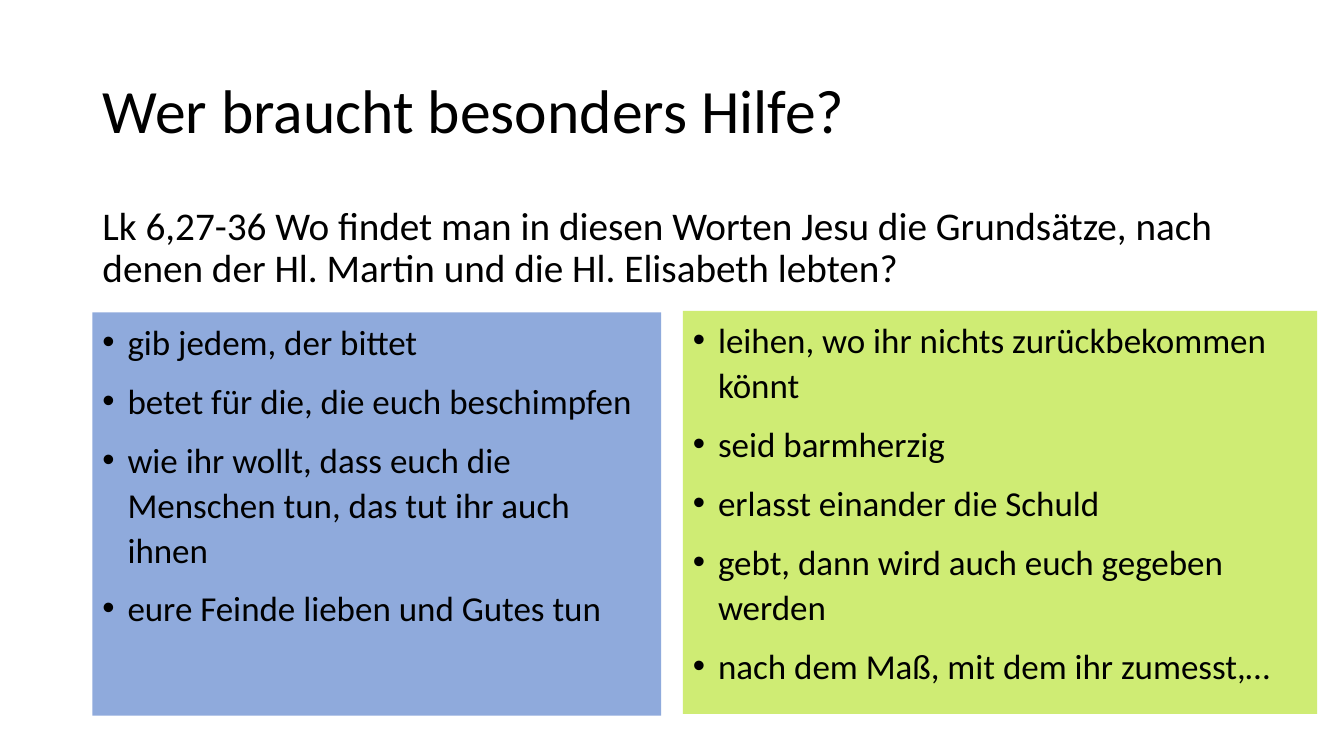
import pptx
import pptx.dml.color
import pptx.enum.shapes
import pptx.enum.text
import pptx.oxml
import pptx.oxml.ns
import pptx.util

BLACK = pptx.dml.color.RGBColor(0x00, 0x00, 0x00)
BLUE = pptx.dml.color.RGBColor(0x8F, 0xAA, 0xDC)
LIME = pptx.dml.color.RGBColor(0xCF, 0xEC, 0x74)

COLUMNS, ROWS = 16, 9
LEFT, WIDTH = 1.1, 13.8  # text margin and text width in columns
BULLET_INDENT = pptx.util.Inches(0.25)


class Page:
    """Style and current slide; positions are grid columns and rows."""

    font_name = "Calibri"

    def __init__(self, deck):
        self.column = deck.slide_width / COLUMNS
        self.row = deck.slide_height / ROWS
        self.slide = deck.slides.add_slide(deck.slide_layouts[1])

    def area(self, left, top, width, height):
        return (round(left * self.column), round(top * self.row),
                round(width * self.column), round(height * self.row))

    def fill_text(self, frame, lines, size, anchor, spacing, before, bullet=False):
        frame.word_wrap = True
        frame.auto_size = pptx.enum.text.MSO_AUTO_SIZE.NONE
        frame.vertical_anchor = anchor
        for index, line in enumerate(lines):
            para = frame.paragraphs[0] if index == 0 else frame.add_paragraph()
            para.text = line
            para.alignment = pptx.enum.text.PP_ALIGN.LEFT
            para.line_spacing = spacing
            para.space_before = pptx.util.Pt(before)
            para.font.name = self.font_name
            para.font.size = pptx.util.Pt(size)
            para.font.color.rgb = BLACK
            self.set_bullet(para, bullet)

    def set_bullet(self, para, bullet):
        properties = para._p.get_or_add_pPr()
        indent = BULLET_INDENT if bullet else 0
        properties.set("marL", str(indent))
        properties.set("indent", str(-indent))
        if bullet:
            tags = ['<a:buFont {} typeface="Arial"/>', '<a:buChar {} char="•"/>']
        else:
            tags = ["<a:buNone {}/>"]
        run_defaults = properties.find(pptx.oxml.ns.qn("a:defRPr"))
        for tag in tags:
            run_defaults.addprevious(
                pptx.oxml.parse_xml(tag.format(pptx.oxml.ns.nsdecls("a"))))

    def placeholder(self, index, text, area, size, anchor, before):
        holder = self.slide.placeholders[index]
        holder.left, holder.top, holder.width, holder.height = self.area(*area)
        self.fill_text(holder.text_frame, [text], size, anchor, 0.9, before)

    def list_box(self, lines, area, color):
        box = self.slide.shapes.add_shape(
            pptx.enum.shapes.MSO_SHAPE.RECTANGLE, *self.area(*area))
        box.shadow.inherit = False
        box.fill.solid()
        box.fill.fore_color.rgb = color
        box.line.fill.background()
        self.fill_text(box.text_frame, lines, 25, pptx.enum.text.MSO_ANCHOR.TOP,
                       1.07, 10, bullet=True)


def main():
    deck = pptx.Presentation()
    deck.slide_width = pptx.util.Inches(13.33)
    deck.slide_height = pptx.util.Inches(7.5)
    page = Page(deck)

    # Title and question
    page.placeholder(0, "Wer braucht besonders Hilfe?", (LEFT, 0.48, WIDTH, 1.74),
                     44, pptx.enum.text.MSO_ANCHOR.MIDDLE, 0)
    page.placeholder(1, "Lk 6,27-36 Wo findet man in diesen Worten Jesu die Grundsätze, "
                     "nach denen der Hl. Martin und die Hl. Elisabeth lebten?",
                     (LEFT, 2.4, WIDTH, 1.19), 28, pptx.enum.text.MSO_ANCHOR.TOP, 10)

    # Answers in two coloured boxes
    page.list_box(["gib jedem, der bittet",
                   "betet für die, die euch beschimpfen",
                   "wie ihr wollt, dass euch die Menschen tun, das tut ihr auch ihnen",
                   "eure Feinde lieben und Gutes tun"],
                  (LEFT, 3.72, 6.77, 4.8), BLUE)
    page.list_box(["leihen, wo ihr nichts zurückbekommen könnt",
                   "seid barmherzig",
                   "erlasst einander die Schuld",
                   "gebt, dann wird auch euch gegeben werden",
                   "nach dem Maß, mit dem ihr zumesst,…"],
                  (8.13, 3.7, 7.55, 4.8), LIME)

    deck.save("out.pptx")


if __name__ == "__main__":
    main()
